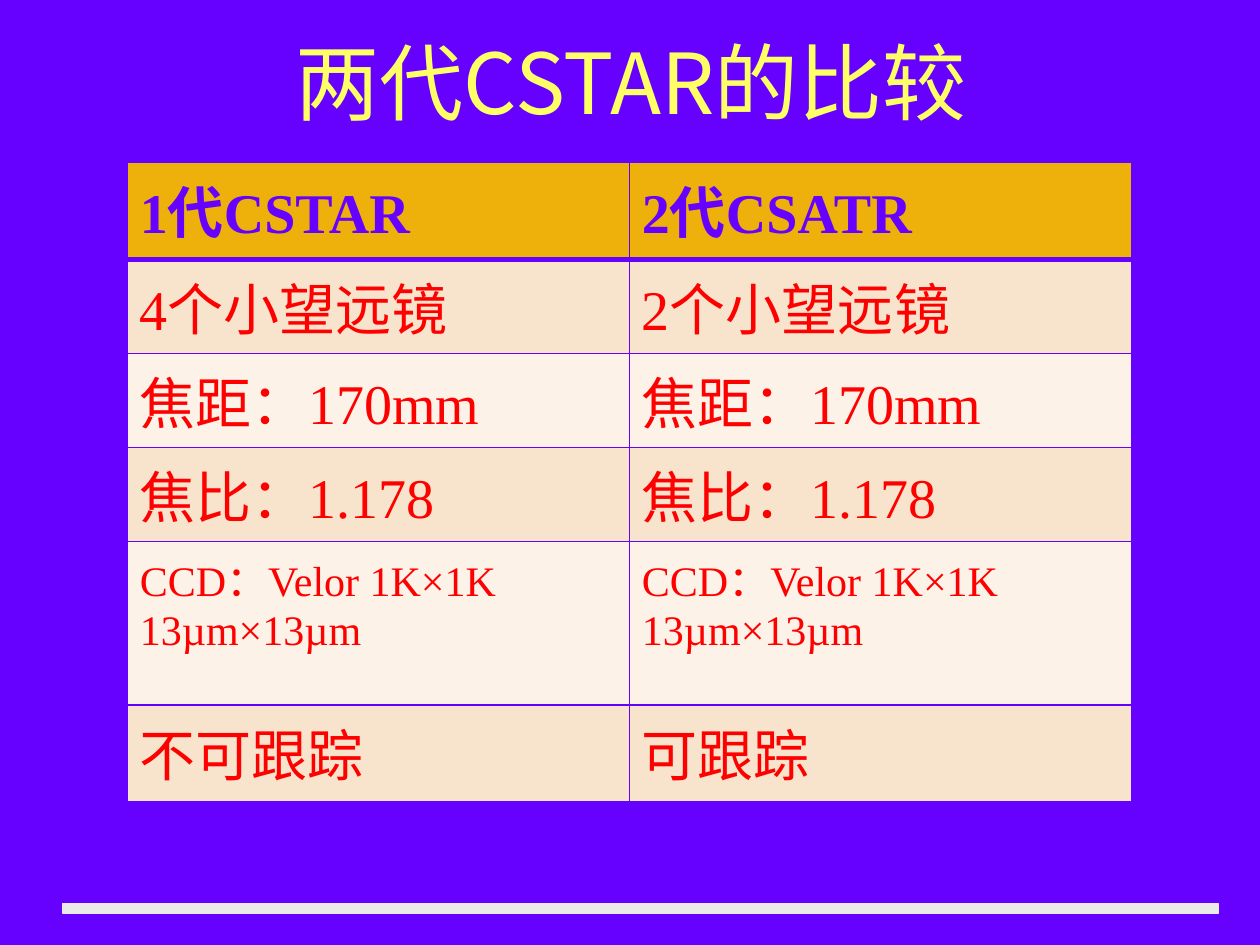
from typing import NamedTuple

from lxml import etree
from pptx import Presentation
from pptx.dml.color import RGBColor
from pptx.enum.shapes import MSO_SHAPE
from pptx.enum.text import MSO_ANCHOR, PP_ALIGN
from pptx.oxml.ns import qn
from pptx.util import Inches, Pt

RECT = MSO_SHAPE.RECTANGLE
TOP = MSO_ANCHOR.TOP
CENTER = PP_ALIGN.CENTER

SANS = "Noto Sans CJK SC"
SERIF = "Times New Roman"
BACK = "6600FF"
RED = "FF0000"
GOLD = "EEB00B"
BANDS = ("F8E4CC", "FCF2E7")
BAR = "EAEAEA"


class Row(NamedTuple):
    texts: tuple[str, str]
    high: float
    size: int = 32


CCD = "CCD：Velor 1K×1K 13µm×13µm"
ROWS = (
    Row(("1代CSTAR", "2代CSATR"), 0.77),
    Row(("4个小望远镜", "2个小望远镜"), 0.71),
    Row(("焦距：170mm",) * 2, 0.71),
    Row(("焦比：1.178",) * 2, 0.71),
    Row((CCD,) * 2, 1.3, 24),
    Row(("不可跟踪", "可跟踪"), 0.77),
)


def color(code: str) -> RGBColor:
    return RGBColor.from_string(code)


def add_run(para, text: str, size: int, face: str, ink: str, bold: bool = False) -> None:
    run = para.add_run()
    run.text = text
    font = run.font
    font.size, font.name, font.bold = Pt(size), face, bold
    font.color.rgb = color(ink)
    east = etree.SubElement(run._r.get_or_add_rPr(), qn("a:ea"))
    east.set("typeface", SANS)


def add_edge(props, side: str, width: float) -> None:
    edge = etree.SubElement(props, qn(f"a:ln{side}"), w=str(Pt(width)))
    fill = etree.SubElement(edge, qn("a:solidFill"))
    etree.SubElement(fill, qn("a:srgbClr"), val=BACK)


def style_cell(cell, fill: str, top: float, base: float) -> None:
    props = cell._tc.get_or_add_tcPr()
    for side, width in zip("LRTB", (1, 1, top, base)):
        add_edge(props, side, width)
    cell.fill.solid()
    cell.fill.fore_color.rgb = color(fill)


def add_grid(slide) -> None:
    high = sum(row.high for row in ROWS)
    frame = slide.shapes.add_table(
        len(ROWS), 2, Inches(1.01), Inches(1.29), Inches(7.97), Inches(high))
    table = frame.table
    for r, row in enumerate(ROWS):
        head = r == 0
        table.rows[r].height = Inches(row.high)
        for c, text in enumerate(row.texts):
            cell = table.cell(r, c)
            style_cell(cell, GOLD if head else BANDS[(r - 1) % 2],
                       3 if r == 1 else 1, 3 if head else 1)
            add_run(cell.text_frame.paragraphs[0], text, row.size, SERIF,
                    BACK if head else RED, head)


def add_bar(slide) -> None:
    bar = slide.shapes.add_shape(
        RECT, Inches(0.5), Inches(7.17), Inches(9.17), Inches(0.08))
    bar.shadow.inherit = False
    bar.fill.solid()
    bar.fill.fore_color.rgb = color(BAR)
    bar.line.color.rgb = color(BAR)
    bar.line.width = Pt(1)


def set_title(slide) -> None:
    title = slide.shapes.title
    title.left, title.top = Inches(0.51), Inches(0.28)
    title.width, title.height = Inches(9), Inches(1.25)
    frame = title.text_frame
    frame.word_wrap = True
    frame.vertical_anchor = TOP
    para = frame.paragraphs[0]
    para.alignment = CENTER
    para.line_spacing = 0.9
    add_run(para, "两代CSTAR的比较", 48, SANS, "FFFF66")


def main() -> None:
    deck = Presentation()
    deck.slide_width, deck.slide_height = Inches(10), Inches(7.5)
    slide = deck.slides.add_slide(deck.slide_layouts[5])
    slide.background.fill.solid()
    slide.background.fill.fore_color.rgb = color(BACK)
    add_bar(slide)
    set_title(slide)
    add_grid(slide)
    deck.save("out.pptx")


if __name__ == "__main__":
    main()
